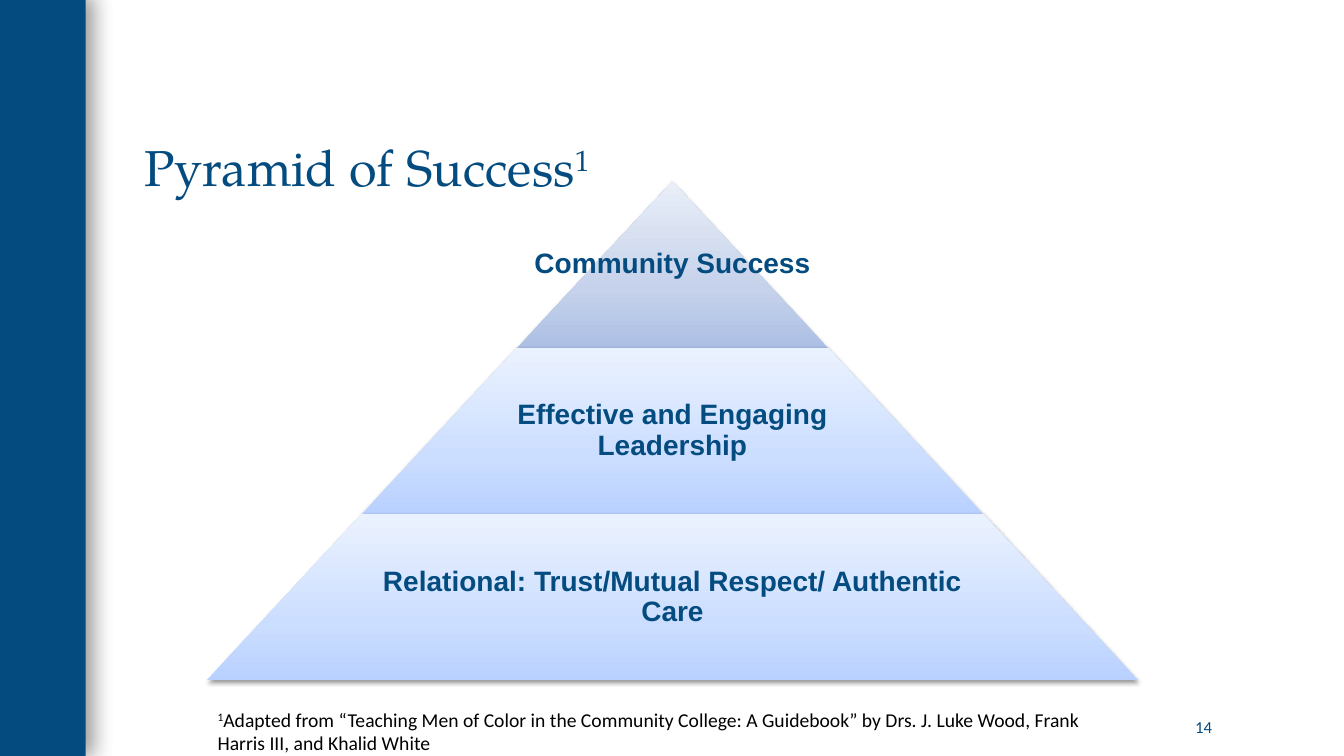
"""Build the Pyramid of Success slide."""
from dataclasses import dataclass

from lxml import etree
from pptx import Presentation
from pptx import util as u
from pptx.dml.color import RGBColor
from pptx.enum import shapes, text
from pptx.oxml import ns

EMU_PER_PX = 9144


@dataclass(frozen=True)
class Theme:
    """Colours, fonts and type sizes."""
    navy: str = "044C7F"
    black: str = "000000"
    peak: tuple = ("ACBFE4", "C6D2EB", "E9EEF8")
    base: tuple = ("B8D1FF", "CCDEFF", "EBF2FF")
    stops: tuple = (0, 35, 100)
    heading: str = "TeX Gyre Pagella"
    label: str = "Arial"
    body: str = "Calibri"
    heading_size: int = 36
    label_size: int = 20
    note_size: int = 14
    number_size: int = 12


def px(length):
    """Turn px into EMU."""
    return u.Emu(length * EMU_PER_PX)


def add_color(parent, color):
    """Append a colour element and return it."""
    return etree.SubElement(parent, ns.qn("a:srgbClr"), val=color)


class SlideBuilder:
    """Hold the theme and the slide, and add elements to it."""

    def __init__(self, slide, theme):
        self.slide = slide
        self.theme = theme

    def shadow(self, shape, opacity, blur, distance, angle):
        """Give a shape an outer shadow."""
        shape.shadow.inherit = False
        effects = shape._element.spPr.find(ns.qn("a:effectLst"))
        outer = etree.SubElement(
            effects, ns.qn("a:outerShdw"), blurRad=str(u.Pt(blur)),
            dist=str(u.Pt(distance)), dir=str(angle * 60000), rotWithShape="0")
        color = add_color(outer, self.theme.black)
        etree.SubElement(color, ns.qn("a:alpha"), val=str(opacity * 1000))

    def sidebar(self, box):
        """Add the solid band at the left edge."""
        band = self.slide.shapes.add_shape(shapes.MSO_SHAPE.RECTANGLE, *map(px, box))
        band.fill.solid()
        band.fill.fore_color.rgb = RGBColor.from_string(self.theme.navy)
        band.line.fill.background()
        self.shadow(band, 40, 15, 5, 0)

    def tier(self, box, slope, colors):
        """Add one gradient layer of the pyramid."""
        layer = self.slide.shapes.add_shape(shapes.MSO_SHAPE.TRAPEZOID, *map(px, box))
        layer.adjustments[0] = slope
        layer.fill.gradient()
        layer.fill.gradient_angle = 90
        stop_list = layer._element.spPr.find(".//" + ns.qn("a:gsLst"))
        for old_stop in list(stop_list):
            stop_list.remove(old_stop)
        for position, color in zip(self.theme.stops, colors):
            stop = etree.SubElement(stop_list, ns.qn("a:gs"), pos=str(position * 1000))
            add_color(stop, color)
        layer.line.fill.background()
        self.shadow(layer, 38, 3.1, 1.6, 90)

    def set_text(self, frame, runs, font, size, color, align, anchor,
                 bold=False, spacing=1.0, inset=(10, 5)):
        """Fill a text frame with (words, raised) runs."""
        frame.word_wrap = True
        frame.auto_size = text.MSO_AUTO_SIZE.NONE
        frame.vertical_anchor = anchor
        frame.margin_left = frame.margin_right = px(inset[0])
        frame.margin_top = frame.margin_bottom = px(inset[1])
        paragraph = frame.paragraphs[0]
        paragraph.alignment = align
        paragraph.line_spacing = spacing
        for words, raised in runs:
            run = paragraph.add_run()
            run.text = words
            run.font.name = font
            run.font.size = u.Pt(size)
            run.font.bold = bold
            run.font.color.rgb = RGBColor.from_string(color)
            if raised:
                run._r.get_or_add_rPr().set("baseline", "30000")

    def title(self, box, runs):
        """Place and fill the title placeholder."""
        heading = self.slide.shapes.title
        heading.left, heading.top, heading.width, heading.height = map(px, box)
        self.set_text(heading.text_frame, runs, self.theme.heading,
                      self.theme.heading_size, self.theme.navy,
                      text.PP_ALIGN.LEFT, text.MSO_ANCHOR.BOTTOM, spacing=0.9)

    def textbox(self, box, runs, *style, **options):
        """Add a text box."""
        holder = self.slide.shapes.add_textbox(*map(px, box))
        self.set_text(holder.text_frame, runs, *style, **options)


def main():
    """Build and save the slide."""
    theme = Theme()
    deck = Presentation()
    deck.slide_width, deck.slide_height = px(1333), px(750)
    slide = deck.slides.add_slide(deck.slide_layouts[5])
    builder = SlideBuilder(slide, theme)
    align, anchor = text.PP_ALIGN, text.MSO_ANCHOR

    builder.sidebar((0, -4, 85, 754))
    builder.title((133, 76, 1128, 125), [("Pyramid of Success", False), ("1", True)])
    builder.textbox((1087, 708, 125, 27), [("14", False)], theme.body,
                    theme.number_size, theme.navy, align.RIGHT, anchor.MIDDLE)

    center, apex, tier_height, half_step = 667, 180, 165, 154
    tiers = [
        ("Community Success", 308, theme.peak),
        ("Effective and Engaging Leadership", 400, theme.base),
        ("Relational: Trust/Mutual Respect/ Authentic Care", 600, theme.base),
    ]
    for level, (label, label_width, colors) in enumerate(tiers):
        top = apex + level * tier_height
        half_width = half_step * (level + 1)
        builder.tier((center - half_width, top, 2 * half_width, tier_height),
                     half_step / tier_height, colors)
        builder.textbox((center - label_width // 2, top, label_width, tier_height),
                        [(label, False)], theme.label, theme.label_size, theme.navy,
                        align.CENTER, anchor.MIDDLE, bold=True, spacing=0.9,
                        inset=(3, 3))

    source = ("Adapted from “Teaching Men of Color in the Community College: "
              "A Guidebook” by Drs. J. Luke Wood, Frank Harris III, and Khalid White")
    builder.textbox((206, 697, 922, 57), [("1", True), (source, False)], theme.body,
                    theme.note_size, theme.black, align.LEFT, anchor.TOP)
    deck.save("out.pptx")


if __name__ == "__main__":
    main()
